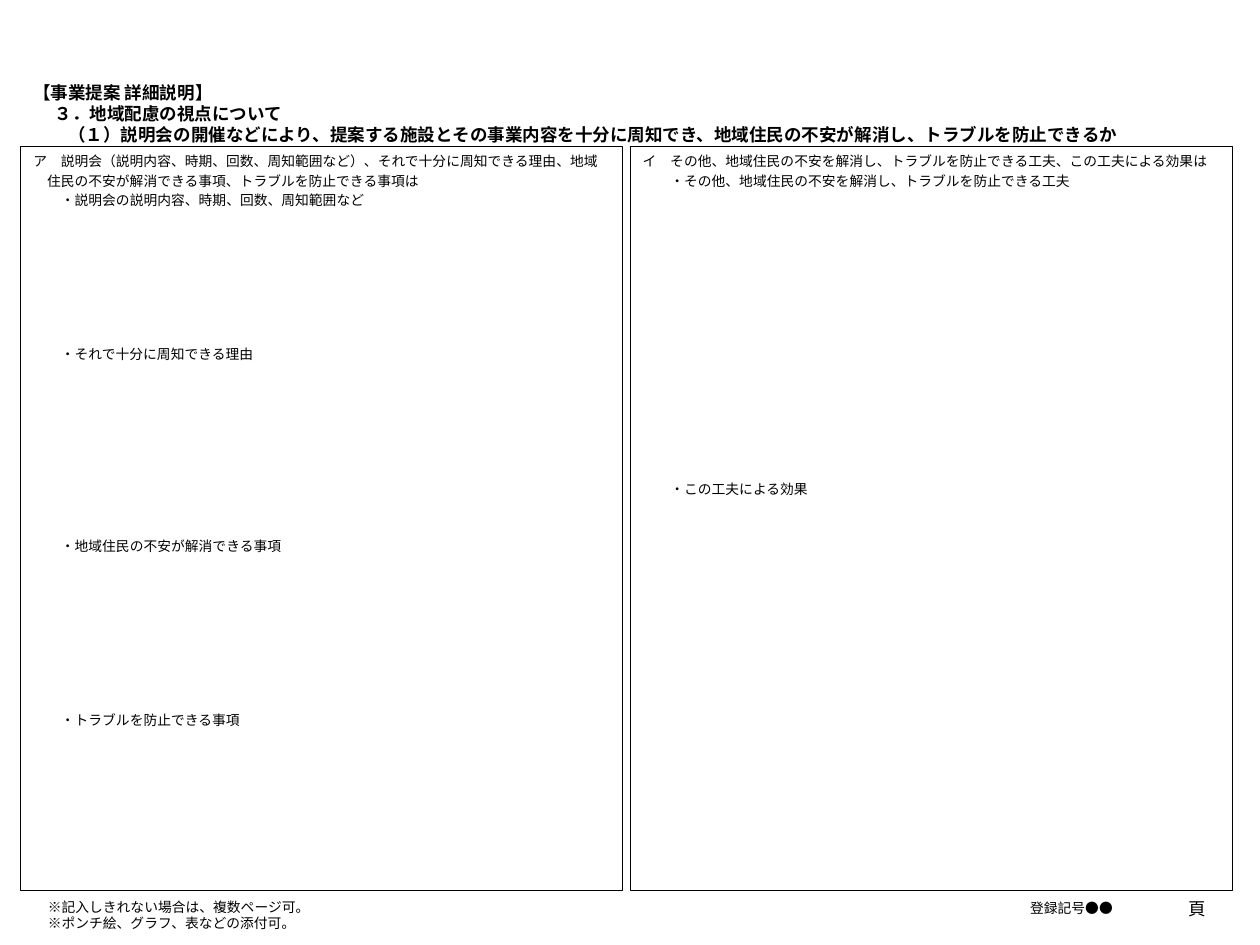
from dataclasses import dataclass

from pptx import Presentation
from pptx.dml.color import RGBColor
from pptx.enum.shapes import MSO_SHAPE
from pptx.enum.text import MSO_ANCHOR, PP_ALIGN
from pptx.oxml.ns import qn
from pptx.util import Cm, Pt

COLORS = {"text": "000000", "border": "000000"}
FONT = "Noto Sans CJK JP"
LINE_RATIO = 1.2
BODY_SIZE = 11
HEADING_SIZE = 14
BODY_GAP = 0.2
ITEM_INDENT = 0.78


@dataclass(frozen=True)
class Line:
    text: str
    indent: float = 0
    rows_above: int = 0


@dataclass(frozen=True)
class Box:
    left: float
    top: float
    width: float
    height: float


@dataclass(frozen=True)
class Panel:
    left: float
    lines: tuple[Line, ...]


HEADING = (
    Line("【事業提案 詳細説明】"),
    Line("３．地域配慮の視点について", indent=0.6),
    Line(
        "（１）説明会の開催などにより、提案する施設とその事業内容を十分に周知でき、"
        "地域住民の不安が解消し、トラブルを防止できるか",
        indent=0.99,
    ),
)

PANELS = (
    Panel(0.58, (
        Line("ア　説明会（説明内容、時期、回数、周知範囲など）、それで十分に周知できる理由、地域"),
        Line("住民の不安が解消できる事項、トラブルを防止できる事項は", ITEM_INDENT / 2),
        Line("・説明会の説明内容、時期、回数、周知範囲など", ITEM_INDENT),
        Line("・それで十分に周知できる理由", ITEM_INDENT, 7),
        Line("・地域住民の不安が解消できる事項", ITEM_INDENT, 9),
        Line("・トラブルを防止できる事項", ITEM_INDENT, 8),
    )),
    Panel(17.78, (
        Line("イ　その他、地域住民の不安を解消し、トラブルを防止できる工夫、この工夫による効果は"),
        Line("・その他、地域住民の不安を解消し、トラブルを防止できる工夫", ITEM_INDENT),
        Line("・この工夫による効果", ITEM_INDENT, 15),
    )),
)

NOTES = (
    Line("※記入しきれない場合は、複数ページ可。"),
    Line("※ポンチ絵、グラフ、表などの添付可。"),
)


def add_text(slide, box: Box, lines: tuple[Line, ...], *, size: int = BODY_SIZE,
             bold: bool = False, align=PP_ALIGN.LEFT, anchor=MSO_ANCHOR.TOP,
             gap: float = 0, bordered: bool = False) -> None:
    place = [Cm(value) for value in (box.left, box.top, box.width, box.height)]
    if bordered:
        holder = slide.shapes.add_shape(MSO_SHAPE.RECTANGLE, *place)
        holder.shadow.inherit = False
        holder.fill.background()
        holder.line.color.rgb = RGBColor.from_string(COLORS["border"])
        holder.line.width = Pt(0.75)
    else:
        holder = slide.shapes.add_textbox(*place)

    frame = holder.text_frame
    frame.word_wrap = True
    frame.vertical_anchor = anchor
    frame.margin_left = frame.margin_right = Cm(0.36)
    frame.margin_top = frame.margin_bottom = Cm(0.18)

    for index, line in enumerate(lines):
        paragraph = frame.paragraphs[0] if index == 0 else frame.add_paragraph()
        paragraph.alignment = align
        paragraph.line_spacing = Pt(size * LINE_RATIO)
        if index:
            row = LINE_RATIO + gap
            paragraph.space_before = Pt(size * (gap + line.rows_above * row))
        paragraph._p.get_or_add_pPr().set("marL", str(Cm(line.indent)))
        run = paragraph.add_run()
        run.text = line.text
        run.font.size = Pt(size)
        run.font.bold = bold
        run.font.name = FONT
        run.font.color.rgb = RGBColor.from_string(COLORS["text"])
        east_asian = run.font._element.makeelement(qn("a:ea"), {"typeface": FONT})
        run.font._element.find(qn("a:latin")).addnext(east_asian)


def main() -> None:
    presentation = Presentation()
    presentation.slide_width = Cm(35.56)
    presentation.slide_height = Cm(26.67)
    slide = presentation.slides.add_slide(presentation.slide_layouts[6])

    add_text(slide, Box(0.58, 2.13, 34, 2.39), HEADING, size=HEADING_SIZE, bold=True)
    for panel in PANELS:
        add_text(slide, Box(panel.left, 4.14, 17, 21), panel.lines,
                 gap=BODY_GAP, bordered=True)
    add_text(slide, Box(20.52, 24.92, 11.25, 1.42), (Line("登録記号●●"),),
             align=PP_ALIGN.RIGHT, anchor=MSO_ANCHOR.MIDDLE)
    add_text(slide, Box(0.99, 25.12, 17.6, 1.42), NOTES, anchor=MSO_ANCHOR.MIDDLE)
    add_text(slide, Box(32.39, 24.92, 2.01, 1.42), (Line("頁"),),
             size=HEADING_SIZE, align=PP_ALIGN.RIGHT, anchor=MSO_ANCHOR.MIDDLE)

    presentation.save("out.pptx")


if __name__ == "__main__":
    main()
